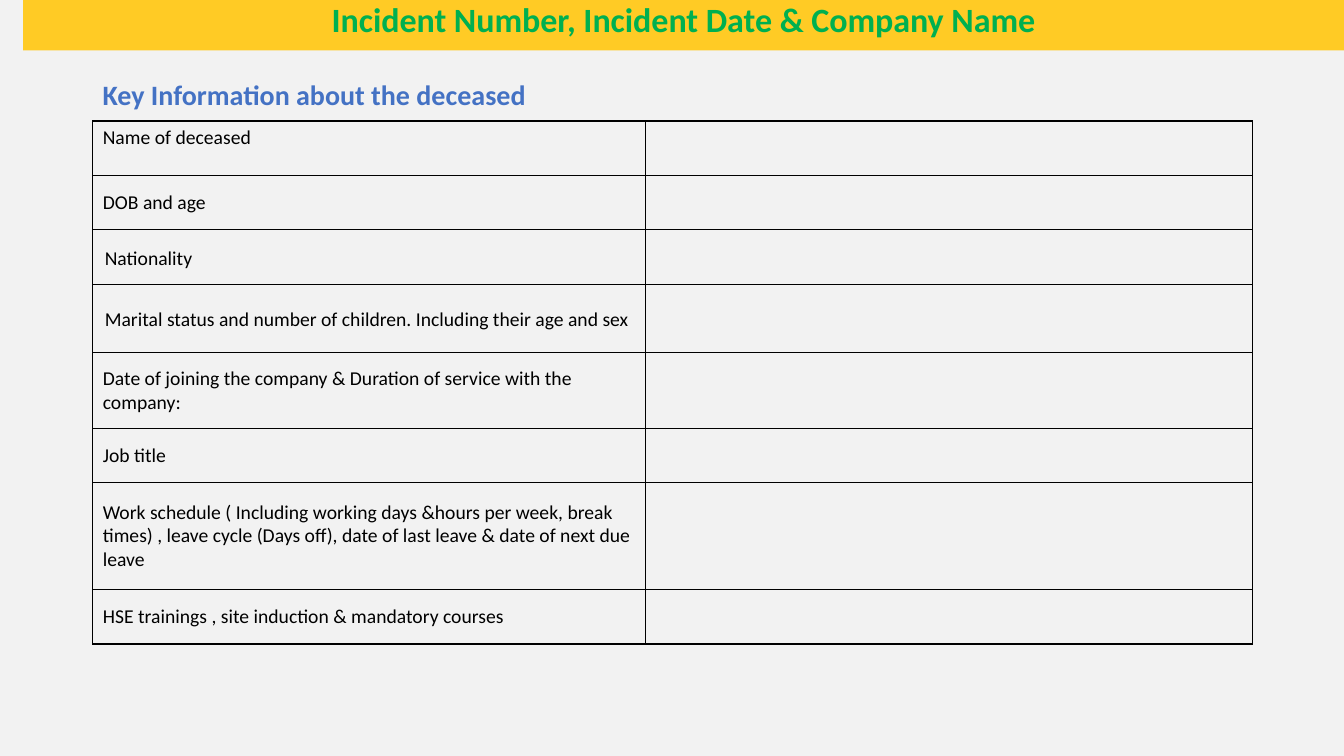
from lxml import etree
from pptx import Presentation
from pptx.dml.color import RGBColor
from pptx.enum.shapes import MSO_SHAPE
from pptx.enum.text import MSO_ANCHOR, PP_ALIGN
from pptx.oxml.ns import qn
from pptx.util import Inches, Pt

RECTANGLE = MSO_SHAPE.RECTANGLE
TOP, MIDDLE = MSO_ANCHOR.TOP, MSO_ANCHOR.MIDDLE
LEFT, CENTER = PP_ALIGN.LEFT, PP_ALIGN.CENTER

WIDTH, HEIGHT = 13.33, 7.5
FONT = "Calibri"
BACKGROUND, YELLOW, GREEN, BLUE, BLACK = "F2F2F2", "FFCB25", "00B050", "4472C4", "000000"

COLUMN_WIDTHS = [5.48, 6.02]
PLAIN = (0.1, 0.05, 1.0)    # side margin, top and bottom margin, line spacing
INDENTED = (0.12, 0, 1.15)
# row height, question, anchor, layout
QUESTIONS = [
    (0.54, "Name of deceased", TOP, PLAIN),
    (0.54, "DOB and age", MIDDLE, PLAIN),
    (0.54, "Nationality", MIDDLE, INDENTED),
    (0.68, "Marital status and number of children. Including their age and sex", MIDDLE, INDENTED),
    (0.75, "Date of joining the company & Duration of service with the company:", MIDDLE, PLAIN),
    (0.54, "Job title", MIDDLE, PLAIN),
    (1.06, "Work schedule ( Including working days &hours per week, break times) , "
           "leave cycle (Days off), date of last leave & date of next due leave", MIDDLE, PLAIN),
    (0.54, "HSE trainings , site induction & mandatory courses", MIDDLE, PLAIN),
]


def paint(fill, color):
    fill.solid()
    fill.fore_color.rgb = RGBColor.from_string(color)


def write(frame, text, size, color, bold=False, align=LEFT, spacing=1.0):
    paragraph = frame.paragraphs[0]
    paragraph.text = text
    paragraph.alignment = align
    paragraph.line_spacing = spacing
    font = paragraph.font
    font.name, font.size, font.bold = FONT, Pt(size), bold
    font.color.rgb = RGBColor.from_string(color)


def add_title_band(slide, left, top, width, height):
    band = slide.shapes.add_shape(RECTANGLE, Inches(left), Inches(top), Inches(width), Inches(height))
    band.shadow.inherit = False
    paint(band.fill, YELLOW)
    band.line.fill.background()
    frame = band.text_frame
    frame.word_wrap = True
    frame.vertical_anchor = MIDDLE
    frame.margin_top, frame.margin_bottom = 0, Inches(0.08)
    write(frame, "Incident Number, Incident Date & Company Name", 24.3, GREEN, True, CENTER, 0.9)


def add_heading(slide, left, top, width, height):
    heading = slide.shapes.add_textbox(Inches(left), Inches(top), Inches(width), Inches(height))
    heading.text_frame.word_wrap = True
    write(heading.text_frame, "Key Information about the deceased", 20, BLUE, True)


def outline(cell):
    """Draw a thin black border on all four sides of a cell."""
    properties = cell._tc.get_or_add_tcPr()
    for position, side in enumerate(("a:lnL", "a:lnR", "a:lnT", "a:lnB")):
        border = etree.Element(qn(side), w=str(Pt(1)))
        fill = etree.SubElement(border, qn("a:solidFill"))
        etree.SubElement(fill, qn("a:srgbClr"), val=BLACK)
        properties.insert(position, border)


def add_questions(slide, left, top):
    heights = [row[0] for row in QUESTIONS]
    table = slide.shapes.add_table(
        len(QUESTIONS), len(COLUMN_WIDTHS), Inches(left), Inches(top),
        Inches(sum(COLUMN_WIDTHS)), Inches(sum(heights))).table
    table.first_row = table.horz_banding = False
    for column, width in zip(table.columns, COLUMN_WIDTHS):
        column.width = Inches(width)
    for row, (height, question, anchor, (side, edge, spacing)) in zip(table.rows, QUESTIONS):
        row.height = Inches(height)
        for cell in row.cells:
            cell.fill.background()
            outline(cell)
        label = row.cells[0]
        label.vertical_anchor = anchor
        label.margin_left, label.margin_right = Inches(side), Inches(0.07)
        label.margin_top = label.margin_bottom = Inches(edge)
        write(label.text_frame, question, 14, BLACK, spacing=spacing)


def main():
    deck = Presentation()
    deck.slide_width, deck.slide_height = Inches(WIDTH), Inches(HEIGHT)
    slide = deck.slides.add_slide(deck.slide_layouts[6])
    paint(slide.background.fill, BACKGROUND)
    band_left, content_left = 0.23, 0.92
    add_title_band(slide, band_left, 0, WIDTH - band_left, 0.5)
    add_questions(slide, content_left, 1.2)
    add_heading(slide, content_left, 0.72, 4.56, 0.44)
    deck.save("out.pptx")


if __name__ == "__main__":
    main()
